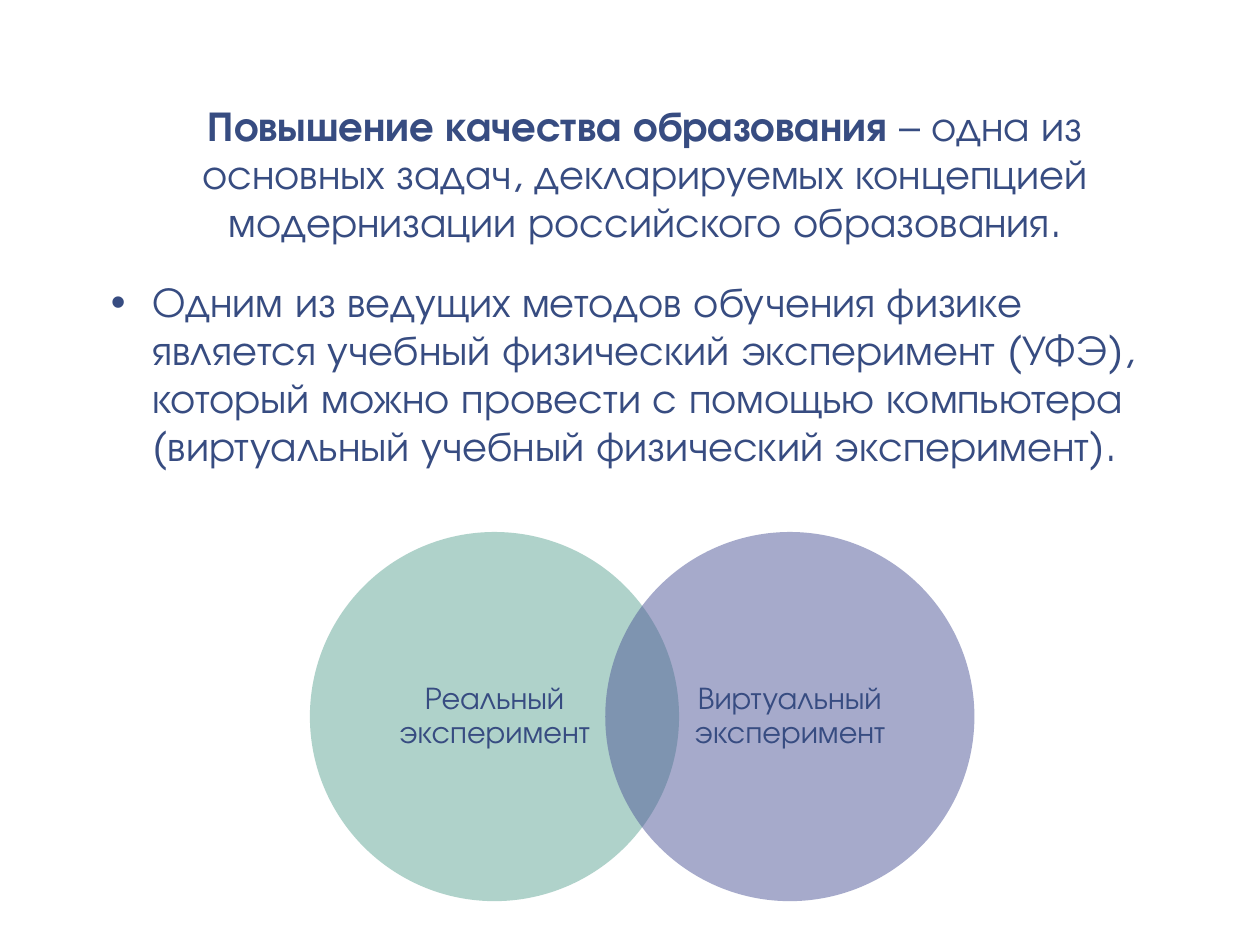
from dataclasses import dataclass

from lxml.etree import SubElement
from pptx import Presentation
from pptx.dml.color import RGBColor
from pptx.enum.shapes import MSO_SHAPE
from pptx.enum.text import MSO_ANCHOR, MSO_AUTO_SIZE, PP_ALIGN
from pptx.oxml.ns import qn
from pptx.util import Inches, Pt


@dataclass(frozen=True)
class Theme:
    font: str = "TeX Gyre Adventor"
    ink: str = "374C81"
    real: str = "61A796"
    virtual: str = "4E5798"
    body: int = 24
    label: int = 18
    gap: float = 18.7
    alpha: int = 50000


def write(para, text, theme, *, size, bold=False):
    run = para.add_run()
    run.text = text
    font = run.font
    font.name, font.size, font.bold = theme.font, Pt(size), bold
    font.color.rgb = RGBColor.from_string(theme.ink)


def set_list(para, mark=None, indent=0.0):
    props = para._p.get_or_add_pPr()
    props.set("marL", str(Inches(indent)))
    props.set("indent", str(-Inches(indent)))
    if mark:
        SubElement(props, qn("a:buFont"), typeface="Arial")
        SubElement(props, qn("a:buChar"), char=mark)
    else:
        SubElement(props, qn("a:buNone"))


class Page:
    def __init__(self, deck, theme):
        self.theme = theme
        self.wide, self.high = deck.slide_width, deck.slide_height
        self.slide = deck.slides.add_slide(deck.slide_layouts[1])
        title = self.slide.shapes.title._element
        title.getparent().remove(title)

    def body(self, left, top, width, height, items):
        box = self.slide.placeholders[1]
        box.left, box.top = int(left * self.wide), int(top * self.high)
        box.width, box.height = int(width * self.wide), int(height * self.high)
        frame = box.text_frame
        frame.word_wrap, frame.auto_size = True, MSO_AUTO_SIZE.NONE
        frame.vertical_anchor = MSO_ANCHOR.TOP
        frame.margin_left = frame.margin_right = Inches(0.13)
        frame.margin_top = frame.margin_bottom = Inches(0.07)
        for index, (align, mark, indent, parts) in enumerate(items):
            para = frame.add_paragraph() if index else frame.paragraphs[0]
            set_list(para, mark, indent)
            para.alignment, para.line_spacing = align, 0.95
            para.space_before = Pt(self.theme.gap if index else 0)
            for text, bold in parts:
                write(para, text, self.theme, size=self.theme.body, bold=bold)

    def circle(self, left, top, size, color, text):
        side = int(size * self.wide)
        shape = self.slide.shapes.add_shape(
            MSO_SHAPE.OVAL, int(left * self.wide), int(top * self.high), side, side
        )
        shape.shadow.inherit = False
        shape.line.fill.background()
        shape.fill.solid()
        shape.fill.fore_color.rgb = RGBColor.from_string(color)
        tint = shape._element.spPr.find(qn("a:solidFill"))[0]
        SubElement(tint, qn("a:alpha"), val=str(self.theme.alpha))
        frame = shape.text_frame
        frame.word_wrap, frame.vertical_anchor = True, MSO_ANCHOR.MIDDLE
        frame.margin_left = frame.margin_right = Inches(0.16)
        frame.margin_top = frame.margin_bottom = Inches(0.03)
        para = frame.paragraphs[0]
        para.alignment, para.line_spacing = PP_ALIGN.CENTER, 0.9
        write(para, text, self.theme, size=self.theme.label)


def main():
    deck = Presentation()
    deck.slide_width, deck.slide_height = Inches(10), Inches(7.5)
    theme = Theme()
    page = Page(deck, theme)
    page.body(0.075, 0.1, 0.874, 0.45, [
        (PP_ALIGN.CENTER, None, 0, [
            ("Повышение качества образования ", True),
            ("– одна из основных задач, декларируемых концепцией "
             "модернизации российского образования.", False),
        ]),
        (PP_ALIGN.LEFT, "•", 0.33, [
            ("Одним из ведущих методов обучения физике является учебный "
             "физический эксперимент (УФЭ), который можно провести с помощью "
             "компьютера (виртуальный учебный физический эксперимент).", False),
        ]),
    ])
    size = 0.293
    rings = [
        (theme.real, "Реальный эксперимент"),
        (theme.virtual, "Виртуальный эксперимент"),
    ]
    for index, (color, text) in enumerate(rings):
        page.circle(0.246 + index * size * 0.8, 0.563, size, color, text)
    deck.save("out.pptx")


if __name__ == "__main__":
    main()
